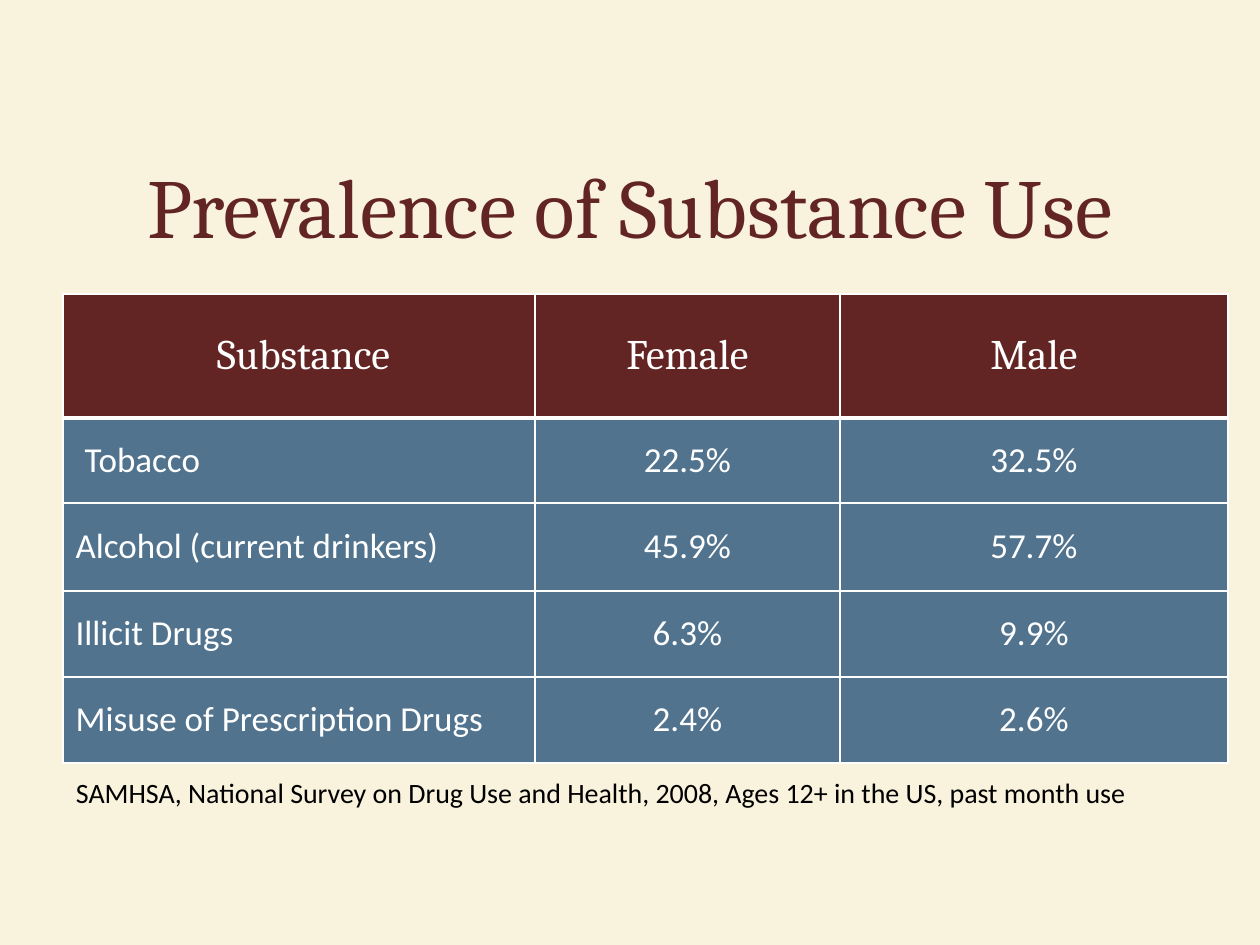
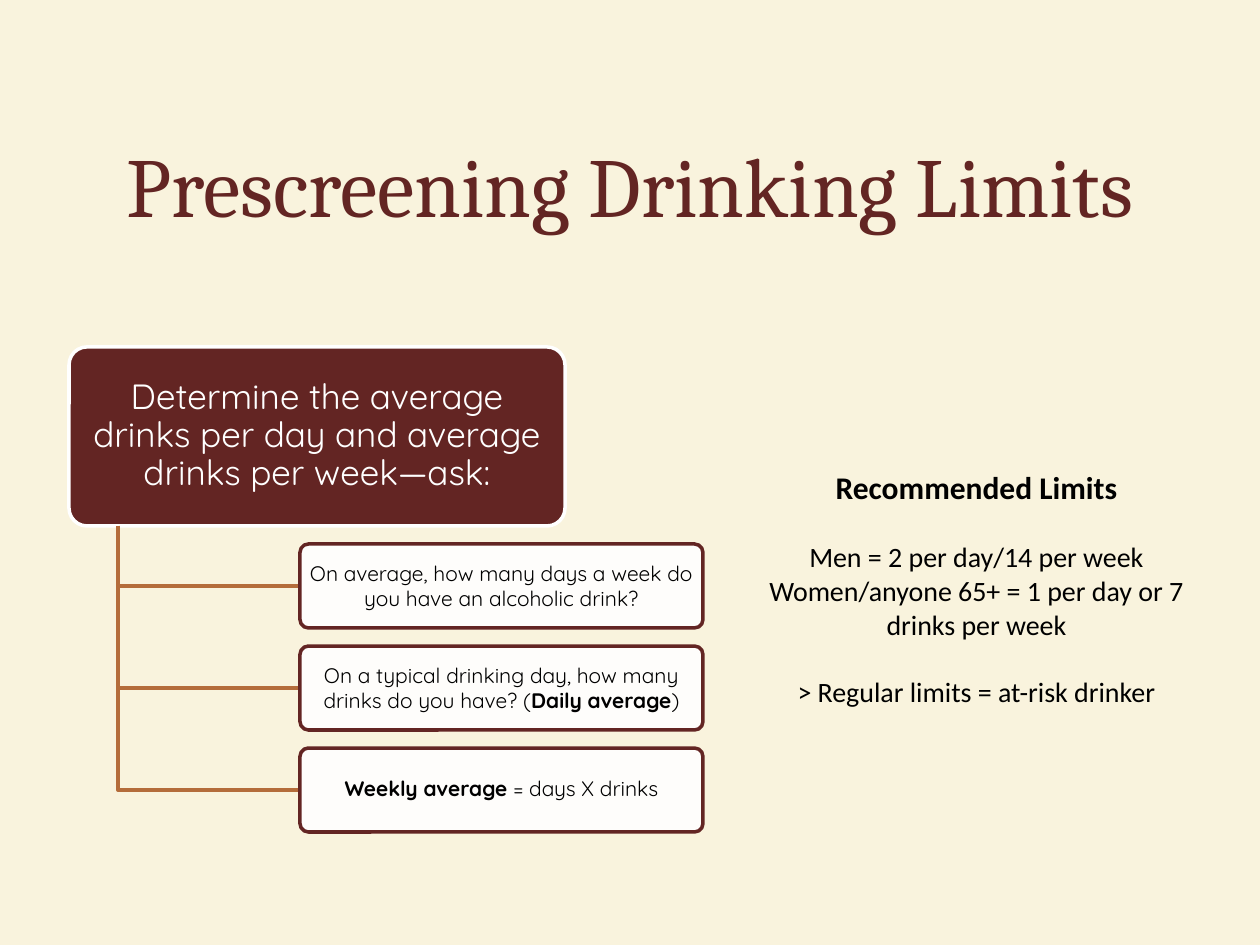
from lxml import etree
from pptx import Presentation
from pptx import util as u
from pptx.dml.color import RGBColor
from pptx.enum import shapes, text
from pptx.oxml.ns import qn

CREAM = RGBColor(0xF9, 0xF3, 0xDD)
MAROON = RGBColor(0x63, 0x25, 0x23)
STEEL = RGBColor(0x51, 0x73, 0x8E)
COPPER = RGBColor(0xB4, 0x6C, 0x3A)
WHITE = RGBColor(0xFF, 0xFF, 0xFF)
BLACK = RGBColor(0x00, 0x00, 0x00)
HEADING, BODY, DIAGRAM = "Cambria", "Calibri", "Quicksand"
WIDTH, HEIGHT = 1260, 945
CENTER, LEFT = text.PP_ALIGN.CENTER, text.PP_ALIGN.LEFT


def px(length):
    return u.Emu(round(length * 9144000 / WIDTH))


class Deck:
    """Holds the shared style and the slide being built."""

    def __init__(self):
        self.prs = Presentation()
        self.prs.slide_width, self.prs.slide_height = px(WIDTH), px(HEIGHT)
        fill = self.prs.slide_master.background.fill
        fill.solid()
        fill.fore_color.rgb = CREAM

    def format(self, paragraph, font, size, color, align=CENTER):
        paragraph.alignment = align
        for run in paragraph.runs:
            run.font.name, run.font.size = font, u.Pt(size)
            run.font.color.rgb = color

    def frame(self, shape, inset=(13, 6), anchor=text.MSO_ANCHOR.MIDDLE):
        frame = shape.text_frame
        frame.word_wrap = True
        frame.vertical_anchor = anchor
        frame.margin_left = frame.margin_right = px(inset[0])
        frame.margin_top = frame.margin_bottom = px(inset[1])
        return frame

    def slide(self, title, top):
        self.current = self.prs.slides.add_slide(self.prs.slide_layouts[5])
        heading = self.current.shapes.title
        heading.left, heading.top = px(0), px(top)
        heading.width, heading.height = px(WIDTH), px(158)
        frame = self.frame(heading)
        frame.text = title
        self.format(frame.paragraphs[0], HEADING, 48, MAROON)

    def header_borders(self, cell):
        for side, points in (("L", 1), ("R", 1), ("T", 1), ("B", 3)):
            line = etree.SubElement(cell._tc.get_or_add_tcPr(), qn(f"a:ln{side}"), w=str(u.Pt(points)))
            fill = etree.SubElement(line, qn("a:solidFill"))
            etree.SubElement(fill, qn("a:srgbClr"), val=str(WHITE))

    def table(self, rows, left, top, widths, heights):
        table = self.current.shapes.add_table(
            len(rows), len(widths), px(left), px(top), px(sum(widths)), px(sum(heights))).table
        table.horz_banding = False
        for column, width in zip(table.columns, widths):
            column.width = px(width)
        for r, (row, height) in enumerate(zip(rows, heights)):
            table.rows[r].height = px(height)
            for c, value in enumerate(row):
                cell = table.cell(r, c)
                if r == 0:
                    self.header_borders(cell)
                cell.fill.solid()
                cell.fill.fore_color.rgb = STEEL if r else MAROON
                cell.vertical_anchor = text.MSO_ANCHOR.MIDDLE
                cell.text = value
                paragraph = cell.text_frame.paragraphs[0]
                self.format(paragraph, BODY if r else HEADING, 20 if r else 24, WHITE,
                            LEFT if r and c == 0 else CENTER)
                paragraph.runs[0].font.bold = False
        return table

    def textbox(self, box, lines, align=CENTER, anchor=text.MSO_ANCHOR.TOP):
        """Each line is (text, size, bold, points of space before)."""
        frame = self.frame(self.current.shapes.add_textbox(*map(px, box)), anchor=anchor)
        for i, (line, size, bold, space) in enumerate(lines):
            paragraph = frame.add_paragraph() if i else frame.paragraphs[0]
            paragraph.text = line
            self.format(paragraph, BODY, size, BLACK, align)
            paragraph.runs[0].font.bold = bold
            if space:
                paragraph.space_before = u.Pt(space)
        return frame

    def card(self, box, runs, size, color, fill, line, inset, spacing=1.0, opacity=100):
        """Each run is (text, bold)."""
        card = self.current.shapes.add_shape(shapes.MSO_SHAPE.ROUNDED_RECTANGLE, *map(px, box))
        card.adjustments[0] = 0.1
        card.shadow.inherit = False
        card.fill.solid()
        card.fill.fore_color.rgb = fill
        if opacity < 100:
            tint = card._element.spPr.find(qn("a:solidFill"))[0]
            etree.SubElement(tint, qn("a:alpha"), val=str(opacity * 1000))
        card.line.color.rgb, card.line.width = line, u.Pt(2)
        paragraph = self.frame(card, inset).paragraphs[0]
        for words, bold in runs:
            run = paragraph.add_run()
            run.text, run.font.bold = words, bold
        self.format(paragraph, DIAGRAM, size, color)
        paragraph.line_spacing = spacing

    def elbow(self, left, top, right, bottom):
        outline = self.current.shapes.build_freeform(px(left), px(top))
        outline.add_line_segments([(px(left), px(bottom)), (px(right), px(bottom))], close=False)
        branch = outline.convert_to_shape()
        branch.shadow.inherit = False
        branch.fill.background()
        branch.line.color.rgb, branch.line.width = COPPER, u.Pt(2)


def prevalence(deck):
    deck.slide("Prevalence of Substance Use", 126)
    rows = [
        ("Substance", "Female", "Male"),
        ("Tobacco", "22.5%", "32.5%"),
        ("Alcohol (current drinkers)", "45.9%", "57.7%"),
        ("Illicit Drugs", "6.3%", "9.9%"),
        ("Misuse of Prescription Drugs", "2.4%", "2.6%"),
    ]
    table = deck.table(rows, 63, 294, (472, 305, 388), (124, 85, 88, 86, 86))
    # Slight indent of the first two labels
    for r in range(2):
        paragraph = table.cell(r, 0).text_frame.paragraphs[0]
        paragraph._p.get_or_add_pPr().set("marL", str(px(9)))
    # Source of the figures
    deck.textbox((63, 766, 1134, 53), [
        ("SAMHSA, National Survey on Drug Use and Health, 2008, "
         "Ages 12+ in the US, past month use", 16, False, 0)], LEFT, text.MSO_ANCHOR.MIDDLE)


def drinking_limits(deck):
    deck.slide("Prescreening Drinking Limits", 105)
    # Opening question
    deck.card((69, 347, 496, 179),
              [("Determine the average drinks per day and average drinks per week—ask:", False)],
              20, WHITE, MAROON, WHITE, (10, 9), 0.9)
    # Steps hanging from it
    steps = [
        ([("On average, how many days a week do you have an alcoholic drink?", False)], 1.0),
        ([("On a typical drinking day, how many drinks do you have? (", False),
          ("Daily average", True), (")", False)], 1.0),
        ([("Weekly average ", True), ("= days X drinks", False)], 0.9),
    ]
    step_left, step_height = 300, 84
    for i, (runs, spacing) in enumerate(steps):
        top = 544 + 102 * i
        deck.elbow(118, 526, step_left, top + step_height / 2)
        deck.card((step_left, top, 403, step_height), runs, 12, BLACK, WHITE, MAROON,
                  (5, 5), spacing, opacity=90)
    # Limits
    limits = deck.textbox((735, 462, 483, 254), [
        ("Recommended Limits", 18, True, 0),
        ("Men = 2 per day/14 per week", 16, False, 19.5),
        ("Women/anyone 65+ = 1 per day or 7 drinks per week", 16, False, 0),
        ("> Regular limits = at-risk drinker", 16, False, 19.5)])
    limits.auto_size = text.MSO_AUTO_SIZE.SHAPE_TO_FIT_TEXT


def main():
    deck = Deck()
    prevalence(deck)
    drinking_limits(deck)
    deck.prs.save("out.pptx")


if __name__ == "__main__":
    main()
